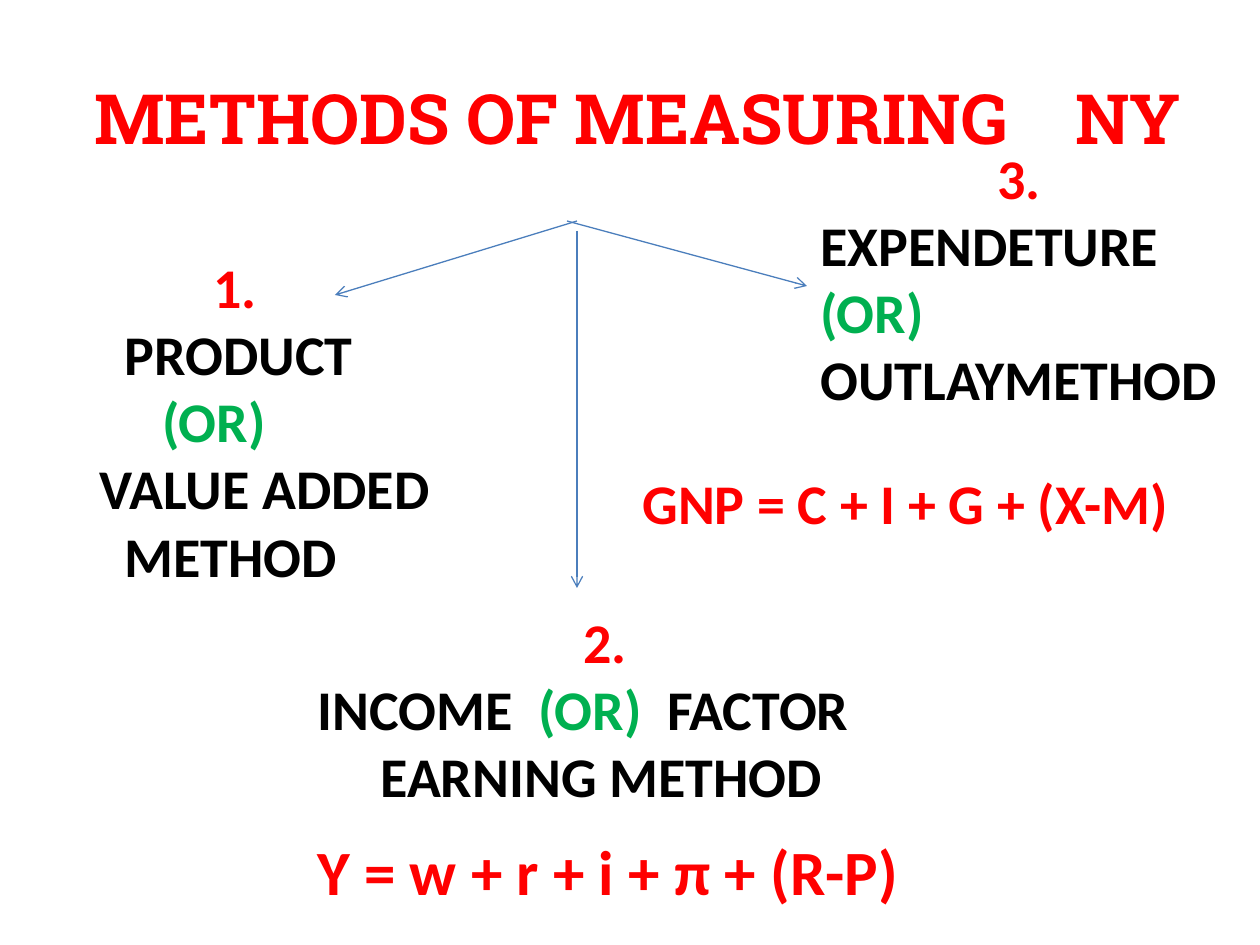
from pptx import Presentation
from pptx.dml.color import RGBColor
from pptx.enum.shapes import MSO_CONNECTOR
from pptx.enum.text import MSO_ANCHOR, PP_ALIGN
from pptx.oxml.ns import qn
from pptx.util import Emu, Pt
from lxml.etree import SubElement

PX = 914400 / 126
RED, GREEN, BLACK, BLUE = "FF0000", "00B050", "000000", "4B7EBC"


def px(n):
    return Emu(round(n * PX))


def add_text(box, lines, size, font="Calibri"):
    """Each line is (indent in px, [(text, colour), ...])."""
    tb = s.shapes.add_textbox(*map(px, box))
    tf = tb.text_frame
    tf.word_wrap = True
    for i, (indent, runs) in enumerate(lines):
        p = tf.add_paragraph() if i else tf.paragraphs[0]
        p.font.size, p.font.bold, p.font.name = Pt(size), True, font
        p._p.get_or_add_pPr().set("marL", str(px(indent)))
        for text, color in runs:
            r = p.add_run()
            r.text = text
            r.font.color.rgb = RGBColor.from_string(color)
    return tf


prs = Presentation()
prs.slide_width, prs.slide_height = px(1260), px(945)
s = prs.slides.add_slide(prs.slide_layouts[6])

title = add_text((71, 38, 1134, 158),
                 [(0, [("METHODS OF MEASURING    NY", RED)])], 39.6, "Roboto Slab")
title.vertical_anchor = MSO_ANCHOR.MIDDLE
title.paragraphs[0].alignment = PP_ALIGN.CENTER

# Arrows from the title to the three methods
for ends in [(577, 221, 335, 295), (567, 221, 807, 286), (577, 231, 577, 588)]:
    arrow = s.shapes.add_connector(MSO_CONNECTOR.STRAIGHT, *map(px, ends))
    arrow.line.color.rgb = RGBColor.from_string(BLUE)
    arrow.line.width = Pt(0.75)
    SubElement(arrow.line._get_or_add_ln(), qn("a:tailEnd"), type="arrow")
    SubElement(arrow._element.spPr, qn("a:effectLst"))

product = [
    (152, [("1.", RED)]),
    (63, [("PRODUCT", BLACK)]),
    (101, [("(OR)", GREEN)]),
    (38, [("VALUE ADDED", BLACK)]),
    (63, [("METHOD", BLACK)]),
]
income = [
    (266, [("2.", RED)]),
    (0, [("INCOME  ", BLACK), ("(OR)  ", GREEN), ("FACTOR", BLACK)]),
    (63, [("EARNING METHOD", BLACK)]),
]
expenditure = [
    (177, [("3.", RED)]),
    (0, [("EXPENDETURE ", BLACK), ("(OR)", GREEN)]),
    (0, [("OUTLAYMETHOD", BLACK)]),
]
add_text((49, 246, 483, 352), product, 32)
add_text((305, 601, 609, 285), income, 32)
add_text((808, 137, 452, 285), expenditure, 32)

# Formulas
add_text((305, 826, 630, 90), [(0, [("Y = w + r + i + π + (R-P)", RED)])], 36)
add_text((630, 462, 583, 80), [(0, [("GNP = C + I + G + (X-M)", RED)])], 32)

prs.save("out.pptx")
